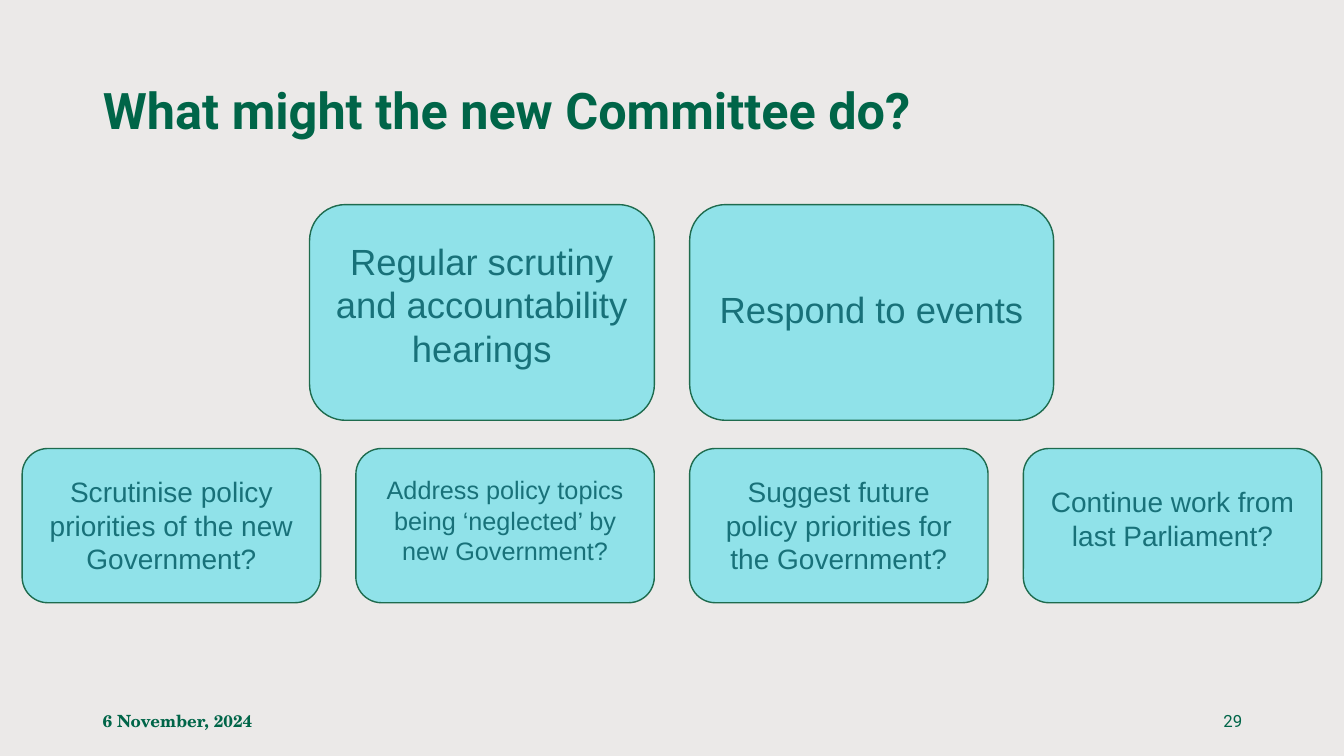
from pptx import Presentation
from pptx import util as u
from pptx.dml.color import RGBColor
from pptx.enum import shapes, text

GREEN, TEAL, AQUA, EDGE, PAPER = "006548", "187179", "90E2E9", "1E6B4E", "EBE9E8"


def color(value):
    return RGBColor.from_string(value)


def write(shape, words, size, font, ink, bold=False,
          align=text.PP_ALIGN.LEFT, anchor=text.MSO_ANCHOR.MIDDLE):
    frame = shape.text_frame
    frame.word_wrap = True
    frame.vertical_anchor = anchor
    paragraph = frame.paragraphs[0]
    paragraph.text = words
    paragraph.alignment = align
    paragraph.font.size = u.Pt(size)
    paragraph.font.name = font
    paragraph.font.bold = bold
    paragraph.font.color.rgb = color(ink)
    return paragraph


presentation = Presentation()
presentation.slide_width = u.Inches(13.33)
presentation.slide_height = u.Inches(7.5)
slide = presentation.slides.add_slide(presentation.slide_layouts[5])
slide.background.fill.solid()
slide.background.fill.fore_color.rgb = color(PAPER)

# Title
title = slide.shapes.title
title.left, title.top = u.Inches(0.92), u.Inches(0.4)
title.width, title.height = u.Inches(11.5), u.Inches(1.45)
heading = write(title, "What might the new Committee do?", 36, "Roboto", GREEN, True)
heading.line_spacing = 0.9

# Footer: date and page number
for left, words, font, bold, align in [
    (0.92, "6 November, 2024", "TeX Gyre Schola", True, text.PP_ALIGN.LEFT),
    (9.42, "29", "Roboto", False, text.PP_ALIGN.RIGHT),
]:
    footer = slide.shapes.add_textbox(u.Inches(left), u.Inches(6.95), u.Inches(3), u.Inches(0.4))
    write(footer, words, 12, font, GREEN, bold, align)

# Cards: column, left nudge, width, label top, label height, font size, label
top_row = [
    (1, -0.46, 3.42, 2.32, 1.41, 26, "Regular scrutiny and accountability hearings"),
    (2, 0, 3.61, 2.8, 0.54, 26, "Respond to events"),
]
bottom_row = [
    (0, 0, 2.96, 4.66, 1.11, 20, "Scrutinise policy priorities of the new Government?"),
    (1, 0, 2.96, 4.66, 1.01, 18, "Address policy topics being ‘neglected’ by new Government?"),
    (2, 0, 2.96, 4.66, 1.11, 20, "Suggest future policy priorities for the Government?"),
    (3, 0, 2.96, 4.76, 0.77, 20, "Continue work from last Parliament?"),
]
first_left, column_pitch = 0.22, 3.31

for top, height, inset, cards in [(2.03, 2.14, 0.16, top_row), (4.45, 1.53, 0.13, bottom_row)]:
    for column, nudge, width, label_top, label_height, size, words in cards:
        left = first_left + column * column_pitch + nudge
        group = slide.shapes.add_group_shape()
        card = group.shapes.add_shape(
            shapes.MSO_SHAPE.ROUNDED_RECTANGLE,
            u.Inches(left), u.Inches(top), u.Inches(width), u.Inches(height))
        card.shadow.inherit = False
        card.fill.solid()
        card.fill.fore_color.rgb = color(AQUA)
        card.line.color.rgb = color(EDGE)
        card.line.width = u.Pt(1)
        label = group.shapes.add_textbox(
            u.Inches(left + inset), u.Inches(label_top),
            u.Inches(width - 2 * inset), u.Inches(label_height))
        write(label, words, size, "Arial", TEAL,
              align=text.PP_ALIGN.CENTER, anchor=text.MSO_ANCHOR.TOP)
        label.text_frame.auto_size = text.MSO_AUTO_SIZE.SHAPE_TO_FIT_TEXT

presentation.save("out.pptx")
